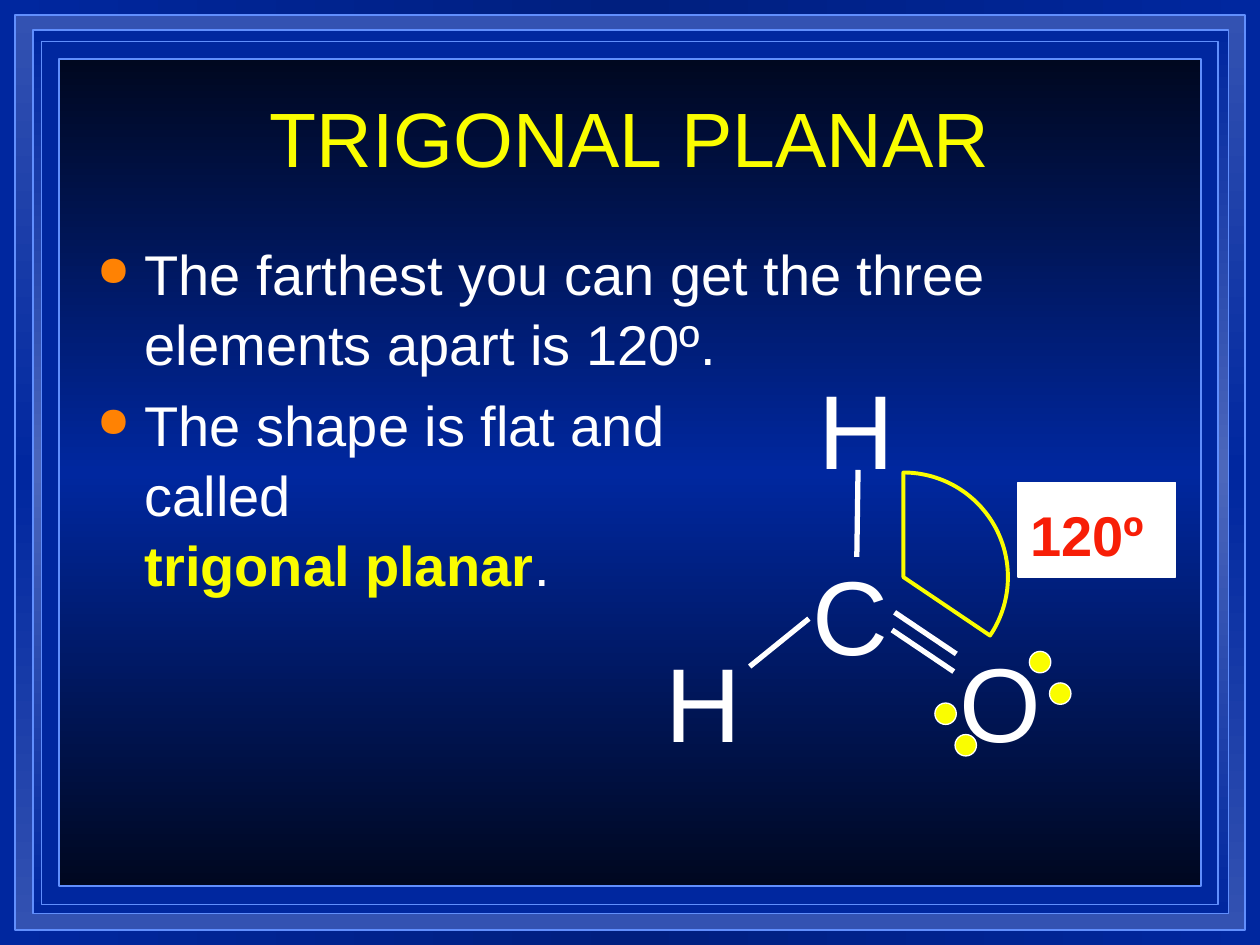
from copy import deepcopy
from math import cos, radians, sin

from pptx import Presentation
from pptx.dml.color import RGBColor
from pptx.enum.shapes import MSO_CONNECTOR, MSO_SHAPE
from pptx.enum.text import MSO_ANCHOR, PP_ALIGN
from pptx.oxml.ns import qn
from pptx.oxml.xmlchemy import OxmlElement
from pptx.util import Inches, Pt

RECTANGLE, OVAL = MSO_SHAPE.RECTANGLE, MSO_SHAPE.OVAL
STRAIGHT = MSO_CONNECTOR.STRAIGHT
MIDDLE, TOP = MSO_ANCHOR.MIDDLE, MSO_ANCHOR.TOP
CENTER = PP_ALIGN.CENTER

FONT = "Arial"
BLUE, EDGE, NIGHT = "00279F", "618FFD", "000820"
YELLOW, WHITE, ORANGE, RED = "FAFD00", "FFFFFF", "FF8203", "F71E07"

# left, top, width, height, gradient from edge to middle to edge
FRAMES = [
    (0.12, 0.12, 9.76, 7.26, ("3352B2", BLUE, "3352B2")),
    (0.26, 0.24, 9.49, 7.01, (BLUE, "4C67BC", BLUE)),
    (0.33, 0.33, 9.34, 6.85, (BLUE, BLUE, BLUE)),
    (0.47, 0.47, 9.06, 6.56, (NIGHT, BLUE, NIGHT)),
]
ATOMS = [("C", 6.35, 4.32), ("H", 6.4, 2.84), ("H", 5.18, 5.01), ("O", 7.52, 5.01)]
BONDS = [
    (6.81, 3.73, 6.8, 4.42),
    (6.42, 4.91, 5.95, 5.29),
    (7.1, 4.86, 7.59, 5.19),
    (7.08, 5, 7.57, 5.33),
]
LONE_PAIRS = [(7.42, 5.58), (7.58, 5.83), (8.17, 5.17), (8.33, 5.42)]


def color(value):
    return RGBColor.from_string(value)


def inches(*values):
    return [Inches(value) for value in values]


def fill_gradient(fill, element, colors, angle):
    """Give a fill three evenly spaced stops; element is its XML owner."""
    fill.gradient()
    fill.gradient_angle = angle
    stop_list = element.find(".//" + qn("a:gsLst"))
    stop_list.insert(1, deepcopy(stop_list[0]))
    for stop, position, value in zip(fill.gradient_stops, (0, 0.5, 1), colors):
        stop.position = position
        stop.color.rgb = color(value)


def style_outline(shape, value, width):
    shape.line.color.rgb = color(value)
    shape.line.width = Pt(width)


def style_span(span, size, value, bold=False):
    span.font.name = FONT
    span.font.size = Pt(size)
    span.font.bold = bold
    span.font.color.rgb = color(value)


def add_shape(page, kind, box, fill, line, line_width):
    shape = page.shapes.add_shape(kind, *inches(*box))
    shape.shadow.inherit = False
    shape.fill.solid()
    shape.fill.fore_color.rgb = color(fill)
    style_outline(shape, line, line_width)
    return shape


def add_text(shapes, box, text, size, value, bold=False):
    frame = shapes.add_textbox(*inches(*box)).text_frame
    frame.word_wrap = True
    frame.vertical_anchor = TOP
    frame.text = text
    for para in frame.paragraphs:
        for span in para.runs:
            style_span(span, size, value, bold)
    return frame


def add_frames(page):
    for *box, colors in FRAMES:
        frame = add_shape(page, RECTANGLE, box, BLUE, EDGE, 1)
        if len(set(colors)) > 1:
            fill_gradient(frame.fill, frame._element, colors, 90)


def add_title(page, text):
    title = page.shapes.title
    title.left, title.top, title.width, title.height = inches(0.75, 0.67, 8.5, 0.83)
    title.text_frame.text = text
    title.text_frame.vertical_anchor = MIDDLE
    para = title.text_frame.paragraphs[0]
    para.alignment = CENTER
    style_span(para.runs[0], 44, YELLOW)
    page.shapes._spTree.append(title._element)  # in front of the frames


def add_bullet(para):
    properties = para._p.get_or_add_pPr()
    properties.set("marL", str(Inches(0.38)))
    properties.set("indent", str(Inches(-0.38)))
    bullet_color = OxmlElement("a:buClr")
    rgb = OxmlElement("a:srgbClr")
    rgb.set("val", ORANGE)
    bullet_color.append(rgb)
    size = OxmlElement("a:buSzPct")
    size.set("val", "75000")
    character = OxmlElement("a:buChar")
    character.set("char", "●")
    properties.extend([bullet_color, size, character])


def add_body(page):
    frame = add_text(
        page.shapes, (0.67, 1.83, 8.5, 5.08),
        "The farthest you can get the three elements apart is 120º.\n"
        "The shape is flat and\vcalled\v",
        32, WHITE,
    )
    for para in frame.paragraphs:
        para.line_spacing = 1.04
        add_bullet(para)
    shape_para = frame.paragraphs[1]
    shape_para.space_before = Pt(6.4)
    for text, value, bold in (("trigonal planar", YELLOW, True), (".", WHITE, False)):
        span = shape_para.add_run()
        span.text = text
        style_span(span, 32, value, bold)


def add_angle_sector(page, center_x, center_y, radius):
    """Outline the sector from straight up, clockwise to the C=O bond."""
    arc = [
        (Inches(center_x + radius * cos(radians(angle))),
         Inches(center_y + radius * sin(radians(angle))))
        for angle in range(-90, 35, 2)
    ]
    builder = page.shapes.build_freeform(*inches(center_x, center_y))
    builder.add_line_segments(arc, close=True)
    sector = builder.convert_to_shape()
    sector.shadow.inherit = False
    sector.fill.background()
    style_outline(sector, YELLOW, 2.25)


def add_bond(shapes, ends):
    bond = shapes.add_connector(STRAIGHT, *inches(*ends))
    style_outline(bond, WHITE, 3)
    bond._element.spPr.append(OxmlElement("a:effectLst"))


def add_molecule(page):
    molecule = page.shapes.add_group_shape()
    for symbol, left, top in ATOMS:
        add_text(molecule.shapes, (left, top, 0.92, 1.1), symbol, 60, WHITE)
    for ends in BONDS:
        add_bond(molecule.shapes, ends)


def main():
    deck = Presentation()
    deck.slide_width, deck.slide_height = inches(10, 7.5)
    page = deck.slides.add_slide(deck.slide_layouts.get_by_name("Title Only"))
    background = page.background.fill
    fill_gradient(background, page._element, (BLUE, "001F7F", BLUE), 0)
    add_frames(page)
    add_title(page, "TRIGONAL PLANAR")
    add_body(page)
    add_angle_sector(page, 7.17, 4.58, 0.83)
    add_molecule(page)
    add_shape(page, RECTANGLE, (8.08, 3.83, 1.25, 0.75), WHITE, WHITE, 0.75)
    add_text(page.shapes, (8.08, 3.92, 1.41, 0.63), "120º", 32, RED, True)
    for left, top in LONE_PAIRS:
        add_shape(page, OVAL, (left, top, 0.17, 0.17), YELLOW, WHITE, 0.75)
    deck.save("out.pptx")


if __name__ == "__main__":
    main()
